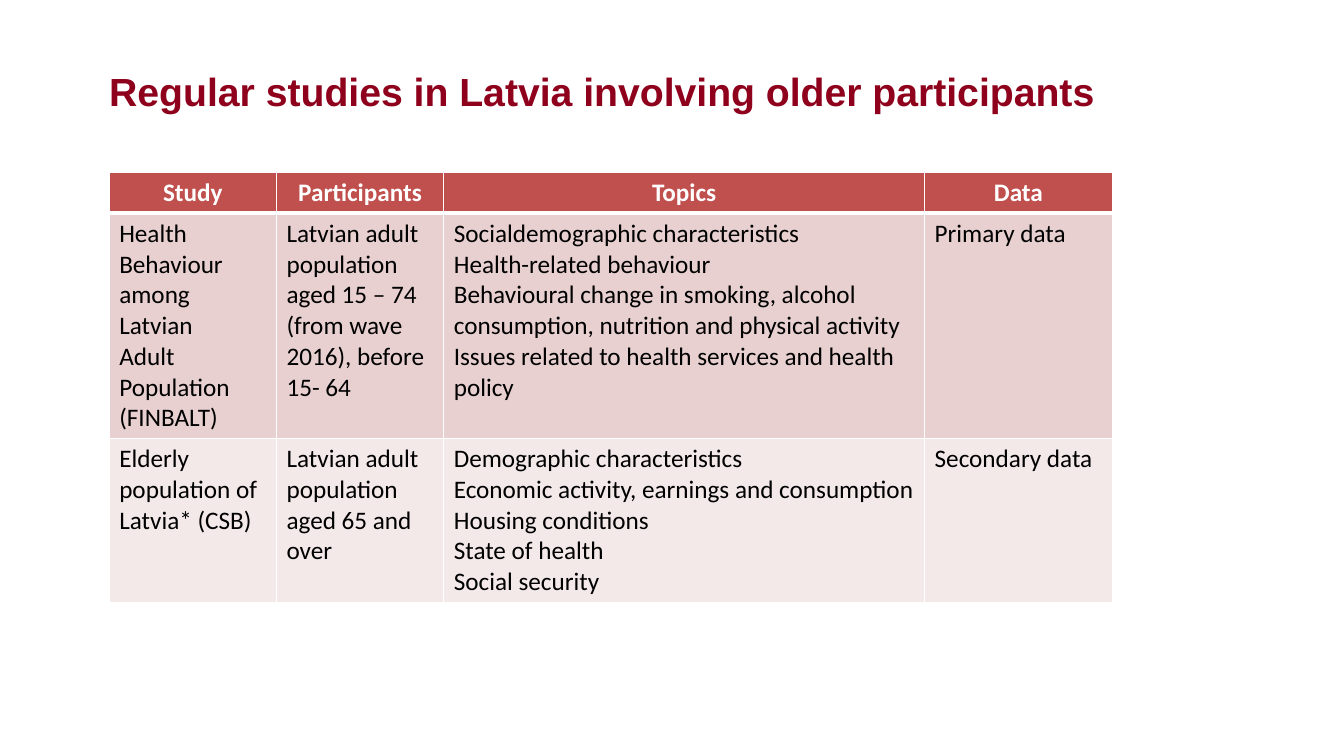
from lxml import etree
from pptx import Presentation
from pptx.dml.color import RGBColor
from pptx.enum import text
from pptx.oxml import ns
from pptx.util import Pt

# Content: a cell is a list of paragraphs, "\n" is a line break
HEADING = "Regular studies in Latvia involving older participants"
STUDIES = [
    [["Study"], ["Participants"], ["Topics"], ["Data"]],
    [
        ["Health Behaviour among Latvian \nAdult Population (FINBALT)"],
        ["Latvian adult population aged 15 – 74 (from wave 2016), before 15- 64"],
        [
            "Socialdemographic characteristics",
            "Health-related behaviour",
            "Behavioural change in smoking, alcohol consumption, nutrition and physical activity",
            "Issues related to health services and health policy",
        ],
        ["Primary data"],
    ],
    [
        ["Elderly population of Latvia* (CSB)"],
        ["Latvian adult population aged 65 and over"],
        [
            "Demographic characteristics",
            "Economic activity, earnings and consumption",
            "Housing conditions",
            "State of health",
            "Social security",
        ],
        ["Secondary data"],
    ],
]
COLORS = {"heading": "8E001C", "header": "C0504D", "odd": "E8D0D0",
          "even": "F4E9E9", "white": "FFFFFF", "black": "000000"}

# Layout in points
LEFT = 78
TABLE_TOP = 123.3
COLUMN_WIDTHS = [119.5, 119.5, 343.5, 134]
ROW_HEIGHTS = [29, 161, 117]
ROW_FILLS = ["header", "odd", "even"]


def add_run(paragraph, words, font_name, size, color, bold):
    run = paragraph.add_run()
    run.text = words
    run.font.name = font_name
    run.font.size = Pt(size)
    run.font.bold = bold
    run.font.color.rgb = RGBColor.from_string(COLORS[color])


def add_borders(cell, bottom_width):
    properties = cell._tc.get_or_add_tcPr()
    for side, width in (("L", 1), ("R", 1), ("T", 1), ("B", bottom_width)):
        line = etree.SubElement(properties, ns.qn(f"a:ln{side}"), w=str(Pt(width)))
        fill = etree.SubElement(line, ns.qn("a:solidFill"))
        etree.SubElement(fill, ns.qn("a:srgbClr"), val=COLORS["white"])


def fill_cell(cell, paragraphs, row):
    is_header = row == 0
    add_borders(cell, 3 if is_header else 1)
    cell.fill.solid()
    cell.fill.fore_color.rgb = RGBColor.from_string(COLORS[ROW_FILLS[row]])
    frame = cell.text_frame
    for number, words in enumerate(paragraphs):
        paragraph = frame.add_paragraph() if number else frame.paragraphs[0]
        paragraph.alignment = text.PP_ALIGN.CENTER if is_header else text.PP_ALIGN.LEFT
        for part, line in enumerate(words.split("\n")):
            if part:
                paragraph.add_line_break()
            add_run(paragraph, line, "Calibri", 18,
                    "white" if is_header else "black", is_header)


def main():
    deck = Presentation()
    deck.slide_width, deck.slide_height = Pt(960), Pt(540)
    slide = deck.slides.add_slide(deck.slide_layouts[5])

    # Title
    heading = slide.shapes.title
    heading.left, heading.top = Pt(LEFT), Pt(48)
    heading.width, heading.height = Pt(804), Pt(34)
    frame = heading.text_frame
    frame.margin_left = frame.margin_right = frame.margin_top = frame.margin_bottom = 0
    frame.vertical_anchor = text.MSO_ANCHOR.TOP
    frame.auto_size = text.MSO_AUTO_SIZE.SHAPE_TO_FIT_TEXT
    frame.paragraphs[0].alignment = text.PP_ALIGN.LEFT
    add_run(frame.paragraphs[0], HEADING, "Arial", 28, "heading", True)

    # Table of studies
    studies = slide.shapes.add_table(
        len(STUDIES), len(COLUMN_WIDTHS), Pt(LEFT), Pt(TABLE_TOP),
        Pt(sum(COLUMN_WIDTHS)), Pt(sum(ROW_HEIGHTS))).table
    for column, width in zip(studies.columns, COLUMN_WIDTHS):
        column.width = Pt(width)
    for row, cells in enumerate(STUDIES):
        studies.rows[row].height = Pt(ROW_HEIGHTS[row])
        for column, paragraphs in enumerate(cells):
            fill_cell(studies.cell(row, column), paragraphs, row)

    deck.save("out.pptx")


if __name__ == "__main__":
    main()
